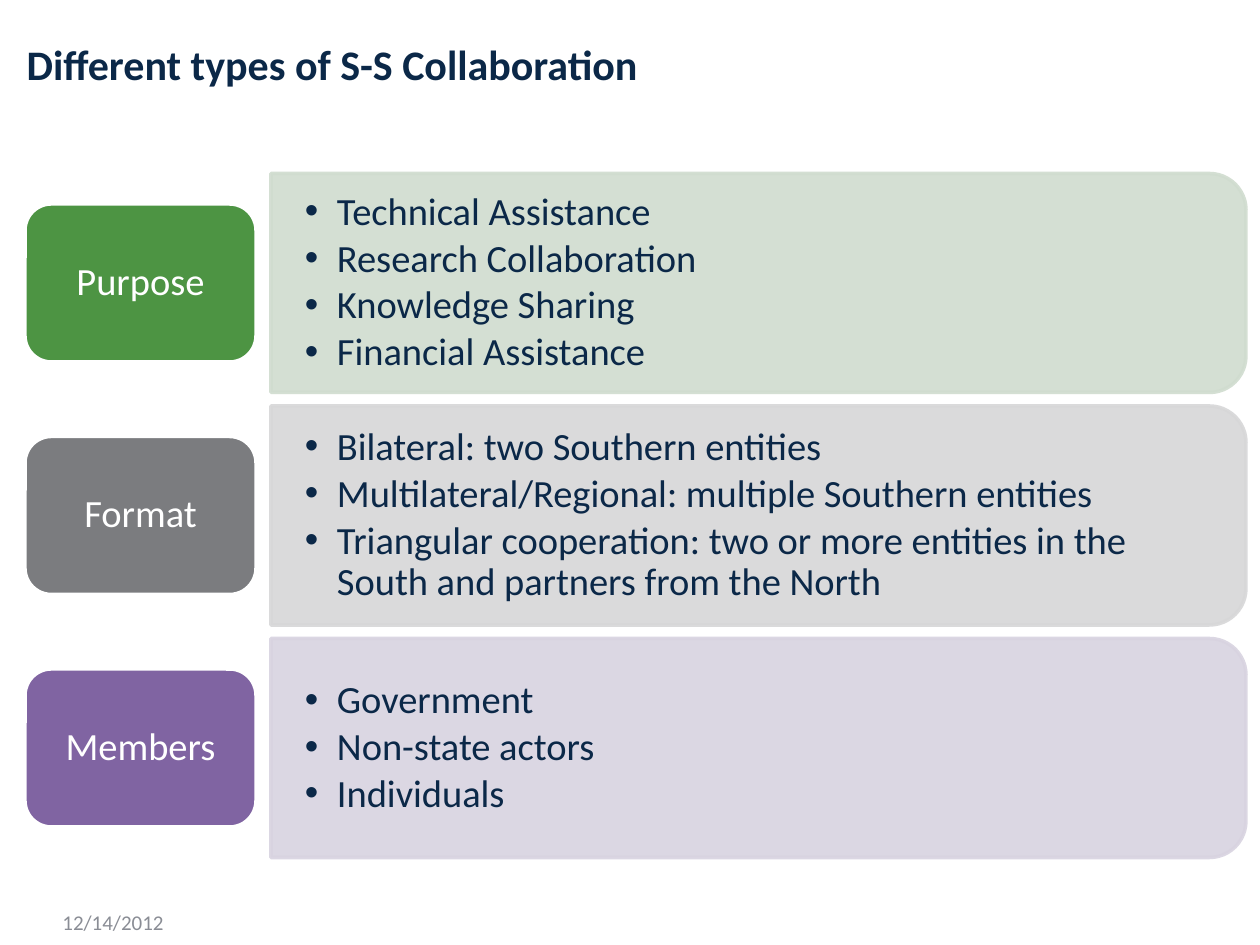
from lxml.etree import SubElement
from pptx import Presentation
from pptx.dml.color import RGBColor
from pptx.enum.shapes import MSO_SHAPE
from pptx.enum.text import MSO_ANCHOR, PP_ALIGN
from pptx.oxml.ns import qn
from pptx.util import Emu, Pt

TITLE = "Different types of S-S Collaboration"
DATE = "12/14/2012"
ROWS = [
    ("Purpose", "green", ["Technical Assistance", "Research Collaboration",
                          "Knowledge Sharing", "Financial Assistance"]),
    ("Format", "gray", ["Bilateral: two Southern entities",
                        "Multilateral/Regional: multiple Southern entities",
                        "Triangular cooperation: two or more entities in the "
                        "South and partners from the North"]),
    ("Members", "purple", ["Government", "Non-state actors", "Individuals"]),
]
COLORS = {
    "navy": "0B2848", "date": "8A8D95", "white": "FFFFFF",
    "green": "4D9443", "gray": "7B7C7F", "purple": "8064A2",
    "green panel": "D0DCCF", "gray panel": "D7D7D8", "purple panel": "D8D3E0",
}
FONT = "Calibri"
PX = 914400 // 126

FIRST_CENTER, LAST_CENTER = 283, 748
PANEL_LEFT, PANEL_WIDTH, PANEL_HEIGHT = 271, 975, 219
LIST_WIDTH, LIST_HEIGHT = 965, 198
LABEL_LEFT, LABEL_WIDTH, LABEL_HEIGHT = 25, 231, 158
BULLET_INDENT = 32


def box(left, top, width, height):
    return [Emu(round(length * PX)) for length in (left, top, width, height)]


def color(name):
    return RGBColor.from_string(COLORS[name])


def format_text(shape, size, color_name, anchor=MSO_ANCHOR.MIDDLE, bold=False):
    frame = shape.text_frame
    frame.word_wrap = True
    frame.vertical_anchor = anchor
    for paragraph in frame.paragraphs:
        for run in paragraph.runs:
            run.font.name = FONT
            run.font.size = Pt(size)
            run.font.bold = bold
            run.font.color.rgb = color(color_name)


def set_margins(frame, horizontal, vertical):
    frame.margin_left = frame.margin_right = Emu(horizontal * PX)
    frame.margin_top = frame.margin_bottom = Emu(vertical * PX)


def add_filled_shape(slide, preset, place, fill, line):
    shape = slide.shapes.add_shape(preset, *place)
    shape.shadow.inherit = False
    shape.fill.solid()
    shape.fill.fore_color.rgb = color(fill)
    shape.line.color.rgb = color(line)
    shape.line.width = Pt(2)
    return shape


def add_panel(slide, center, fill):
    """Add a panel, turned so that its two round corners face right."""
    middle = PANEL_LEFT + PANEL_WIDTH / 2
    place = box(middle - PANEL_HEIGHT / 2, center - PANEL_WIDTH / 2,
                PANEL_HEIGHT, PANEL_WIDTH)
    panel = add_filled_shape(slide, MSO_SHAPE.ROUND_2_SAME_RECTANGLE, place, fill, fill)
    panel.rotation = 90
    for srgb in panel.element.spPr.iter(qn("a:srgbClr")):
        SubElement(srgb, qn("a:alpha"), val="90000")


def add_list(slide, center, items):
    shape = slide.shapes.add_textbox(
        *box(PANEL_LEFT, center - LIST_HEIGHT / 2, LIST_WIDTH, LIST_HEIGHT))
    frame = shape.text_frame
    set_margins(frame, 34, 17)
    frame.text = "\n".join(items)
    for paragraph in frame.paragraphs:
        properties = paragraph._p.get_or_add_pPr()
        properties.set("marL", str(BULLET_INDENT * PX))
        properties.set("indent", str(-BULLET_INDENT * PX))
        SubElement(properties, qn("a:buFont"), typeface="Arial")
        SubElement(properties, qn("a:buChar"), char="•")
        paragraph.line_spacing = 0.9
        paragraph.space_after = Pt(3)
    format_text(shape, 22, "navy")


def add_label(slide, center, text, fill):
    place = box(LABEL_LEFT, center - LABEL_HEIGHT / 2, LABEL_WIDTH, LABEL_HEIGHT)
    label = add_filled_shape(slide, MSO_SHAPE.ROUNDED_RECTANGLE, place, fill, "white")
    label.text_frame.text = text
    label.text_frame.paragraphs[0].alignment = PP_ALIGN.CENTER
    label.text_frame.paragraphs[0].line_spacing = 0.9
    format_text(label, 22, "white")


def main():
    presentation = Presentation()
    presentation.slide_width, presentation.slide_height = box(0, 0, 1260, 945)[2:]
    slide = presentation.slides.add_slide(presentation.slide_layouts[5])

    title = slide.shapes.title
    title.left, title.top, title.width, title.height = box(14, 32, 926, 89)
    title.text_frame.text = TITLE
    title.text_frame.paragraphs[0].alignment = PP_ALIGN.LEFT
    format_text(title, 24, "navy", MSO_ANCHOR.TOP, bold=True)

    pitch = (LAST_CENTER - FIRST_CENTER) / (len(ROWS) - 1)
    for index, (name, hue, items) in enumerate(ROWS):
        center = FIRST_CENTER + index * pitch
        add_panel(slide, center, f"{hue} panel")
        add_list(slide, center, items)
        add_label(slide, center, name, hue)

    date = slide.shapes.add_textbox(*box(50, 897, 294, 50))
    date.text_frame.text = DATE
    format_text(date, 12, "date")

    presentation.save("out.pptx")


if __name__ == "__main__":
    main()
